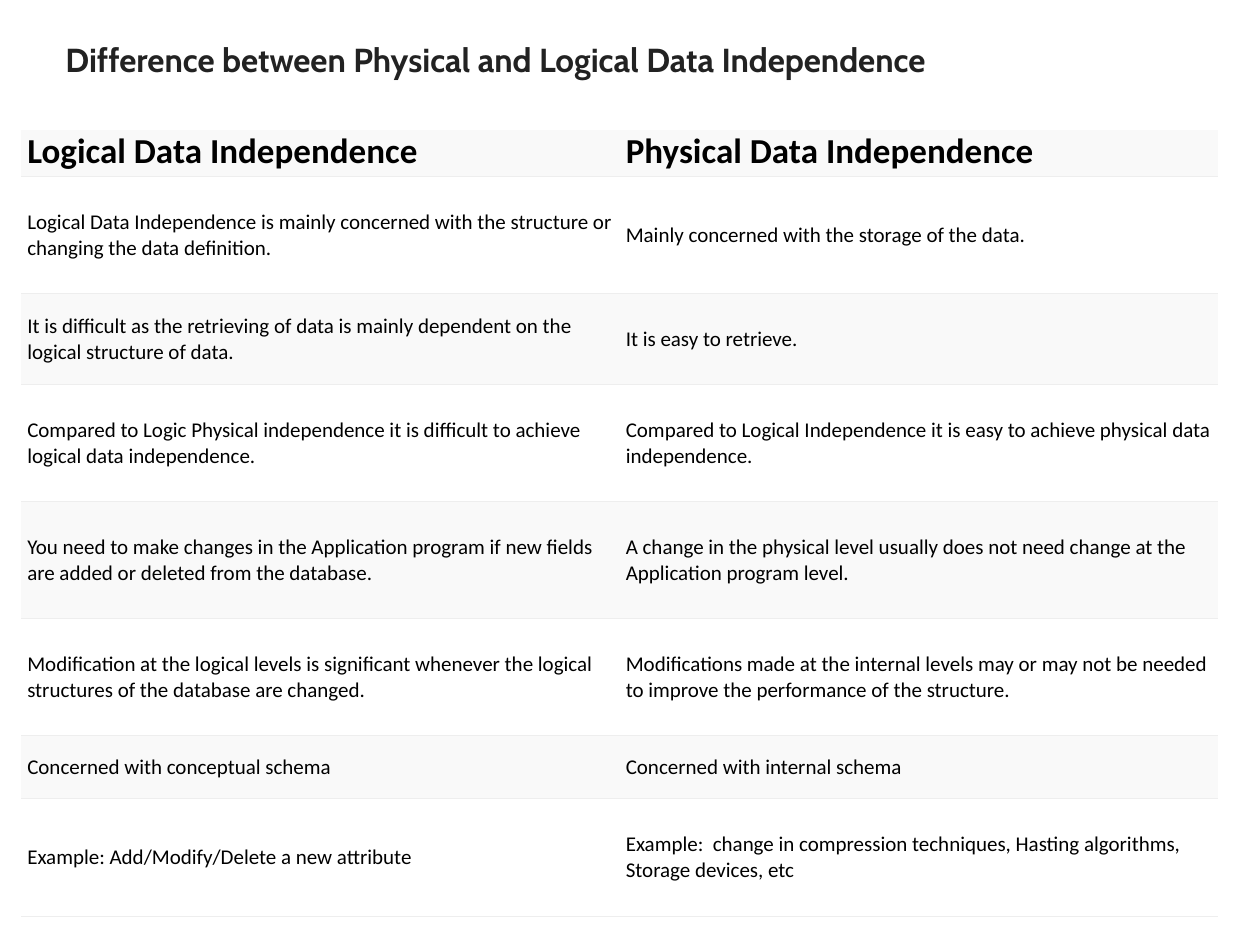
from pptx import Presentation
from pptx.dml.color import RGBColor
from pptx.enum.shapes import MSO_SHAPE
from pptx.enum.text import MSO_ANCHOR, PP_ALIGN
from pptx.oxml.ns import qn
from pptx.util import Cm, Pt
from lxml.etree import SubElement

WHITE = RGBColor(0xFF, 0xFF, 0xFF)
BAND = RGBColor(0xF9, 0xF9, 0xF9)
RULE = RGBColor(0xEE, 0xEE, 0xEE)
BLACK = RGBColor(0, 0, 0)
TITLE_INK = RGBColor(0x22, 0x22, 0x22)

TITLE = "Difference between Physical and Logical Data Independence"
ROWS = [
    ("Logical Data Independence", "Physical Data Independence"),
    ("Logical Data Independence is mainly concerned with the structure or changing the data definition.",
     "Mainly concerned with the storage of the data."),
    ("It is difficult as the retrieving of data is mainly dependent on the logical structure of data.",
     "It is easy to retrieve."),
    ("Compared to Logic Physical independence it is difficult to achieve logical data independence.",
     "Compared to Logical Independence it is easy to achieve physical data independence."),
    ("You need to make changes in the Application program if new fields are added or deleted from the database.",
     "A change in the physical level usually does not need change at the Application program level."),
    ("Modification at the logical levels is significant whenever the logical structures of the database are changed.",
     "Modifications made at the internal levels may or may not be needed to improve the performance of the structure."),
    ("Concerned with conceptual schema", "Concerned with internal schema"),
    ("Example: Add/Modify/Delete a new attribute",
     "Example:  change in compression techniques, Hasting algorithms, Storage devices, etc"),
]
ROW_HEIGHTS = [0.74, 2.36, 1.83, 2.36, 2.36, 2.36, 1.27, 2.36]


def write_text(tf, text, size, font="Calibri", color=BLACK, bold=False):
    p = tf.paragraphs[0]
    p.alignment = PP_ALIGN.LEFT
    r = p.add_run()
    r.text = text
    r.font.size = Pt(size)
    r.font.name = font
    r.font.color.rgb = color
    r.font.bold = bold


def set_borders(cell):
    """Rules above and below the cell, none at its sides."""
    tcPr = cell._tc.get_or_add_tcPr()
    for side in ("a:lnL", "a:lnR"):
        SubElement(SubElement(tcPr, qn(side), w="0"), qn("a:noFill"))
    for side in ("a:lnT", "a:lnB"):
        ln = SubElement(tcPr, qn(side), w=str(Pt(0.6)))
        fill = SubElement(ln, qn("a:solidFill"))
        SubElement(fill, qn("a:srgbClr"), val=str(RULE))


def add_comparison(s, left, top, width):
    height = Cm(sum(ROW_HEIGHTS))
    table = s.shapes.add_table(len(ROWS), 2, left, top, width, height).table
    table.first_row = table.horz_banding = False
    for column in table.columns:
        column.width = width // 2
    for i, (texts, row_height) in enumerate(zip(ROWS, ROW_HEIGHTS)):
        table.rows[i].height = Cm(row_height)
        for j, text in enumerate(texts):
            cell = table.cell(i, j)
            cell.vertical_anchor = MSO_ANCHOR.MIDDLE
            cell.margin_left = cell.margin_right = Cm(0.12)
            cell.margin_top = cell.margin_bottom = Cm(0.08)
            set_borders(cell)
            cell.fill.solid()
            cell.fill.fore_color.rgb = WHITE if i % 2 else BAND
            write_text(cell.text_frame, text, size=12 if i else 20, bold=i == 0)


def add_title(s, left, top, width, height):
    sp = s.shapes.add_shape(MSO_SHAPE.RECTANGLE, left, top, width, height)
    sp.shadow.inherit = False
    sp.fill.solid()
    sp.fill.fore_color.rgb = WHITE
    sp.line.fill.background()
    tf = sp.text_frame
    tf.word_wrap = True
    tf.vertical_anchor = MSO_ANCHOR.MIDDLE
    tf.margin_left = Cm(1.32)
    tf.margin_top = tf.margin_right = 0
    tf.margin_bottom = Cm(0.23)
    write_text(tf, TITLE, size=19, font="Cabin", color=TITLE_INK, bold=True)


def main():
    prs = Presentation()
    prs.slide_width, prs.slide_height = Cm(25.4), Cm(19.05)
    s = prs.slides.add_slide(prs.slide_layouts[6])
    # The title band overlaps the top edge of the table
    add_comparison(s, Cm(0.43), Cm(2.54), Cm(24.13))
    add_title(s, 0, 0, Cm(24.77), Cm(2.62))
    prs.save("out.pptx")


if __name__ == "__main__":
    main()
